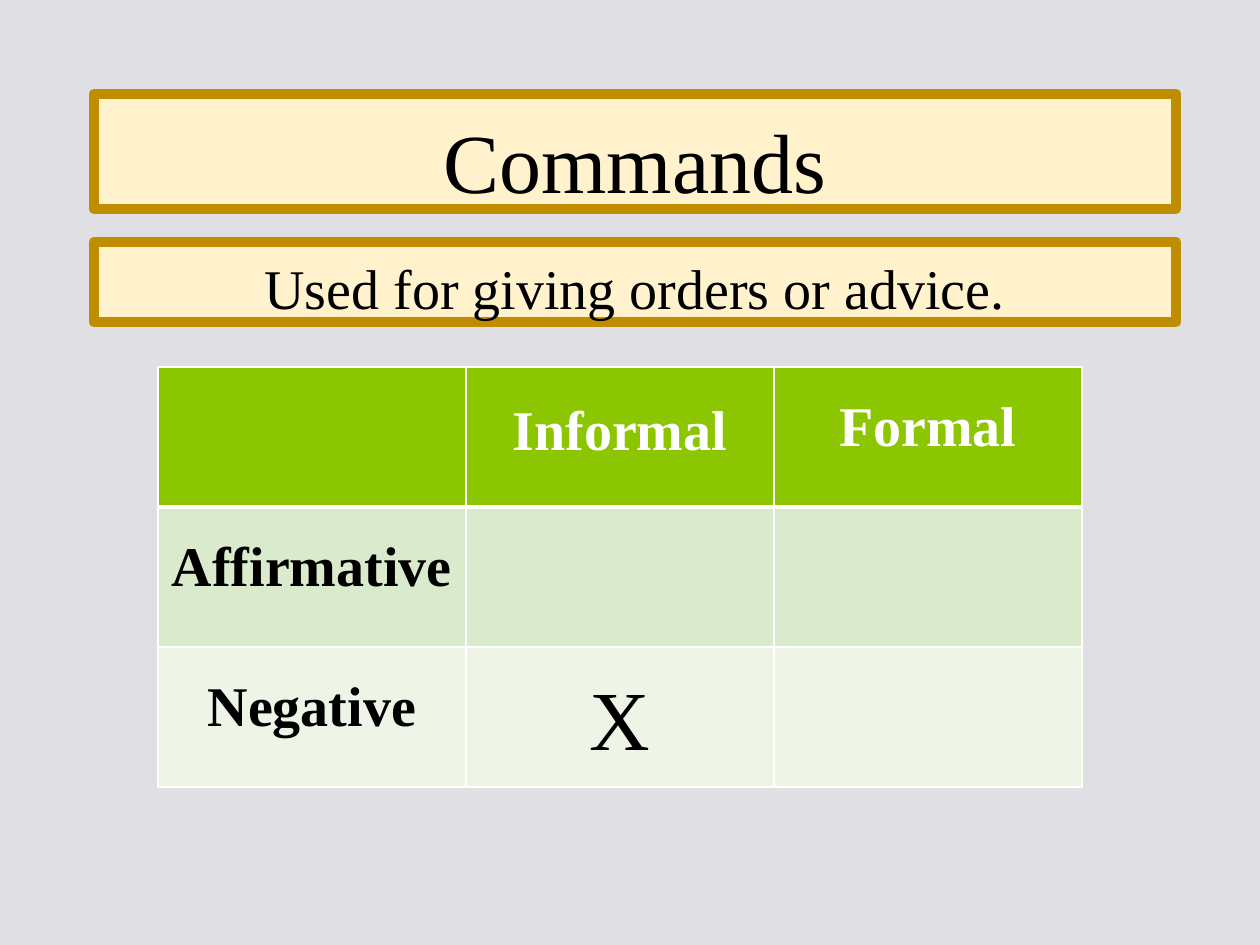
from pptx import Presentation
from pptx.dml.color import RGBColor as Rgb
from pptx.enum.shapes import MSO_SHAPE as Shape
from pptx.enum.text import MSO_ANCHOR as Anchor, PP_ALIGN as Align
from pptx.oxml import parse_xml
from pptx.oxml.ns import nsdecls
from pptx.util import Pt

SCALE = 914400 / 126
HUES = {
    "back": "DFDFE4", "cream": "FFF2CC", "gold": "BF8E00",
    "head": "8CC600", "band": "DAEACC", "pale": "EEF5E7",
    "black": "000000", "white": "FFFFFF",
}
FONT = "Times New Roman"


def px(num):
    return round(num * SCALE)


def hue(name):
    return Rgb.from_string(HUES[name])


def write(frame, text, size=32, color="black", bold=False):
    para = frame.paragraphs[0]
    para.alignment = Align.CENTER
    run = para.add_run()
    run.text = text
    font = run.font
    font.name, font.size, font.bold = FONT, Pt(size), bold
    font.color.rgb = hue(color)


def edge(cell, side, width):
    """Put a white line on one side (L, R, T or B) of a cell."""
    return parse_xml(
        f'<a:ln{side} {nsdecls("a")} w="{Pt(width)}"><a:solidFill>'
        f'<a:srgbClr val="{HUES["white"]}"/></a:solidFill></a:ln{side}>')


class Deck:
    def __init__(self, wide, high):
        self.prs = Presentation()
        self.prs.slide_width, self.prs.slide_height = px(wide), px(high)
        self.slide = self.prs.slides.add_slide(self.prs.slide_layouts[6])
        fill = self.slide.background.fill
        fill.solid()
        fill.fore_color.rgb = hue("back")

    def fit(self, frame, top):
        frame.word_wrap = True
        frame.vertical_anchor = Anchor.TOP
        frame.margin_top, frame.margin_bottom = px(top), 0

    def panel(self, box, text, size, top):
        shape = self.slide.shapes.add_shape(Shape.RECTANGLE, *map(px, box))
        shape.shadow.inherit = False
        shape.fill.solid()
        shape.fill.fore_color.rgb = hue("cream")
        shape.line.color.rgb = hue("gold")
        shape.line.width = Pt(6)
        self.fit(shape.text_frame, top)
        write(shape.text_frame, text, size)

    def label(self, box, text, size, top):
        frame = self.slide.shapes.add_textbox(*map(px, box)).text_frame
        self.fit(frame, top)
        write(frame, text, size)

    def grid(self, left, top, wide, high, rows, fills):
        """Draw a table with equal cells of the given width and height."""
        cols = len(rows[0])
        table = self.slide.shapes.add_table(
            len(rows), cols, px(left), px(top),
            px(wide * cols), px(high * len(rows))).table
        for col in table.columns:
            col.width = px(wide)
        for i, row in enumerate(rows):
            table.rows[i].height = px(high)
            for j, text in enumerate(row):
                self.cell(table.cell(i, j), text, fills[i], i == 0, i == 1)

    def cell(self, cell, text, fill, head, below):
        cell.fill.solid()
        cell.fill.fore_color.rgb = hue(fill)
        props = cell._tc.get_or_add_tcPr()
        widths = {"L": 1, "R": 1, "T": 3 if below else 1, "B": 3 if head else 1}
        for spot, (side, width) in enumerate(widths.items()):
            props.insert(spot, edge(cell, side, width))
        if text:
            cell.margin_top = px(34 if text == "Informal" else 30)
            write(cell.text_frame, text, color="white" if head else "black",
                  bold=True)


def main():
    deck = Deck(1260, 945)
    deck.panel((94, 94, 1082, 115), "Commands", 48, 16)
    deck.grid(158, 367, 308, 140, [
        ["", "Informal", "Formal"],
        ["Affirmative", "", ""],
        ["Negative", "", ""],
    ], ["head", "band", "pale"])
    deck.label((557, 651, 126, 115), "X", 48, 16)
    deck.panel((94, 242, 1082, 80), "Used for giving orders or advice.", 32, 12)
    deck.prs.save("out.pptx")


if __name__ == "__main__":
    main()
